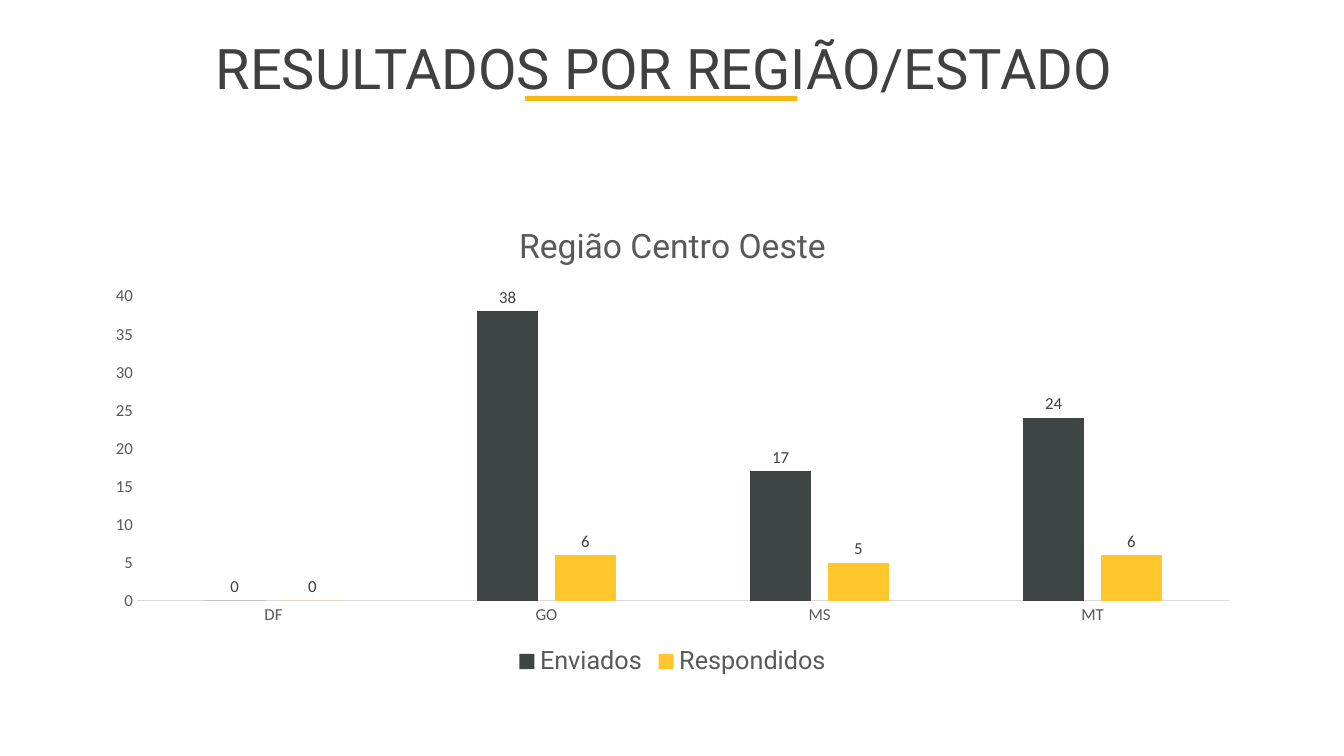
import pptx
import pptx.chart.data
import pptx.dml.color
import pptx.enum.chart
import pptx.enum.shapes
import pptx.enum.text
import pptx.util
from pptx.util import Inches

HEADING = "RESULTADOS POR REGIÃO/ESTADO"
CHART_TITLE = "Região Centro Oeste"
STATES = ["DF", "GO", "MS", "MT"]
SERIES = [
    ("Enviados", [0, 38, 17, 24], "3F4444"),
    ("Respondidos", [0, 6, 5, 6], "FFC72C"),
]
DARK, GREY, PALE, ACCENT = "404040", "595959", "D9D9D9", "F9B914"


def color(value):
    return pptx.dml.color.RGBColor.from_string(value)


def style_font(font, name, size, value):
    font.name = name
    font.size = pptx.util.Pt(size)
    font.bold = False
    font.color.rgb = color(value)


def add_heading(slide):
    underline = slide.shapes.add_shape(
        pptx.enum.shapes.MSO_SHAPE.RECTANGLE,
        Inches(5.21), Inches(0.95), Inches(2.7), Inches(0.05))
    underline.shadow.inherit = False
    underline.fill.solid()
    underline.fill.fore_color.rgb = color(ACCENT)
    underline.line.fill.background()

    heading = slide.shapes.add_textbox(
        Inches(-0.08), Inches(0.28), Inches(13.33), Inches(0.77))
    heading.text_frame.word_wrap = True
    heading.text_frame.auto_size = pptx.enum.text.MSO_AUTO_SIZE.SHAPE_TO_FIT_TEXT
    paragraph = heading.text_frame.paragraphs[0]
    paragraph.alignment = pptx.enum.text.PP_ALIGN.CENTER
    run = paragraph.add_run()
    run.text = HEADING
    style_font(run.font, "Roboto", 40, DARK)


def add_region_chart(slide):
    data = pptx.chart.data.CategoryChartData()
    data.categories = STATES
    for name, values, _ in SERIES:
        data.add_series(name, values)
    chart = slide.shapes.add_chart(
        pptx.enum.chart.XL_CHART_TYPE.COLUMN_CLUSTERED,
        Inches(0.92), Inches(2), Inches(11.5), Inches(4.76), data).chart
    style_font(chart.font, "Calibri", 10, "000000")

    chart.has_title = True
    run = chart.chart_title.text_frame.paragraphs[0].add_run()
    run.text = CHART_TITLE
    style_font(run.font, "Roboto", 24, GREY)
    chart.chart_title.include_in_layout = False

    chart.has_legend = True
    chart.legend.position = pptx.enum.chart.XL_LEGEND_POSITION.BOTTOM
    chart.legend.include_in_layout = False
    style_font(chart.legend.font, "Roboto", 18, GREY)

    for axis in (chart.category_axis, chart.value_axis):
        axis.has_major_gridlines = False
        axis.major_tick_mark = pptx.enum.chart.XL_TICK_MARK.NONE
        axis.minor_tick_mark = pptx.enum.chart.XL_TICK_MARK.NONE
        style_font(axis.tick_labels.font, "Calibri", 12, GREY)
    chart.category_axis.format.line.color.rgb = color(PALE)
    chart.category_axis.format.line.width = pptx.util.Pt(0.75)
    chart.value_axis.format.line.fill.background()
    chart.value_axis.minimum_scale = 0
    chart.value_axis.maximum_scale = 40
    chart.value_axis.major_unit = 5

    plot = chart.plots[0]
    plot.vary_by_categories = False
    plot.gap_width = 219
    plot.overlap = -27
    for series, (_, _, fill) in zip(plot.series, SERIES):
        series.format.fill.solid()
        series.format.fill.fore_color.rgb = color(fill)
        labels = series.data_labels
        labels.show_value = True
        labels.position = pptx.enum.chart.XL_LABEL_POSITION.OUTSIDE_END
        style_font(labels.font, "Calibri", 12, DARK)


def main():
    presentation = pptx.Presentation()
    presentation.slide_width = Inches(13.33)
    presentation.slide_height = Inches(7.5)
    slide = presentation.slides.add_slide(presentation.slide_layouts[6])
    add_heading(slide)
    add_region_chart(slide)
    presentation.save("out.pptx")


if __name__ == "__main__":
    main()
